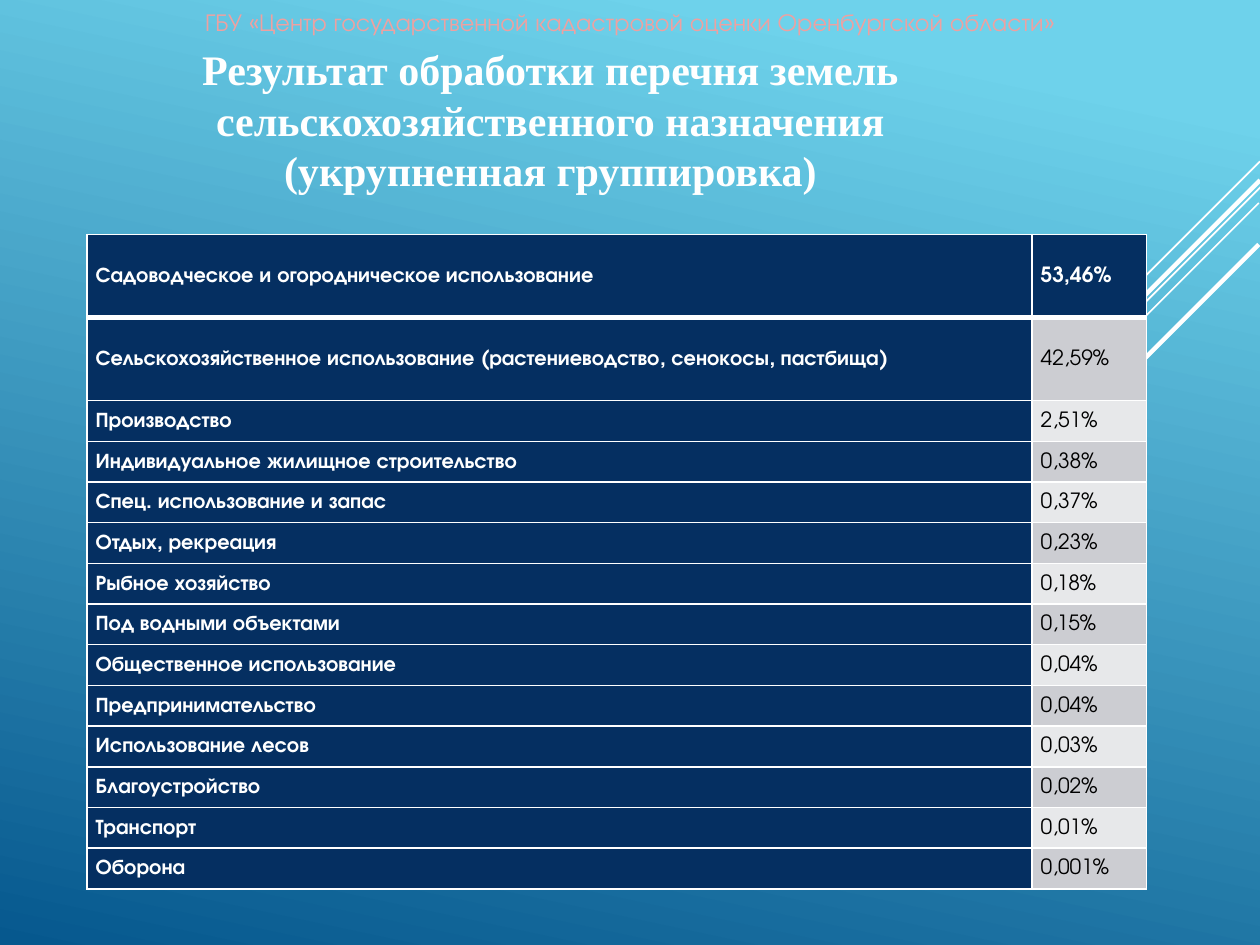
from lxml import etree
from pptx import Presentation
from pptx.dml.color import RGBColor
from pptx.enum import shapes, text
from pptx.oxml import ns
from pptx.util import Pt

COLORS = {
    "sky": "6ED2EB",
    "deep": "06588E",
    "white": "FFFFFF",
    "black": "000000",
    "navy": "052F61",
    "band_dark": "CCCDD2",
    "band_light": "E7E8EA",
    "pink": "EEA1A1",
}
SANS, SERIF = "TeX Gyre Adventor", "Times New Roman"

ORGANISATION = "ГБУ «Центр государственной кадастровой оценки Оренбургской области»"
TITLE = ("Результат обработки перечня земель сельскохозяйственного назначения "
         "(укрупненная группировка)")
LAND_USES = [
    ("Садоводческое и огородническое использование", "53,46%"),
    ("Сельскохозяйственное использование (растениеводство, сенокосы, пастбища)", "42,59%"),
    ("Производство", "2,51%"),
    ("Индивидуальное жилищное строительство", "0,38%"),
    ("Спец. использование и запас", "0,37%"),
    ("Отдых, рекреация", "0,23%"),
    ("Рыбное хозяйство", "0,18%"),
    ("Под водными объектами", "0,15%"),
    ("Общественное использование", "0,04%"),
    ("Предпринимательство", "0,04%"),
    ("Использование лесов", "0,03%"),
    ("Благоустройство", "0,02%"),
    ("Транспорт", "0,01%"),
    ("Оборона", "0,001%"),
]
# right end x, right end y, horizontal run, width
RAYS = [
    (720, 92.2, 247, 1),
    (720.7, 106.5, 379, 1),
    (719.3, 116, 308, 1),
    (720, 103, 302, 2.5),
    (719.3, 139.7, 270, 2.5),
]


def rgb(name):
    return RGBColor.from_string(COLORS[name])


def paint_background(slide):
    fill = slide.background.fill
    fill.gradient()
    fill.gradient_angle = 258
    for stop, color, position in zip(fill.gradient_stops, ("sky", "deep"), (0.1, 1)):
        stop.color.rgb = rgb(color)
        stop.position = position


def add_ray(slide, x, y, run, width):
    """Draw a line falling to the left at 45 degrees."""
    ray = slide.shapes.add_connector(
        shapes.MSO_CONNECTOR.STRAIGHT, Pt(x), Pt(y), Pt(x - run), Pt(y + run))
    ray.line.color.rgb = rgb("white")
    ray.line.width = Pt(width)
    etree.SubElement(ray._element.spPr, ns.qn("a:effectLst"))


def style_paragraph(paragraph, font, size, color, bold, alignment):
    paragraph.alignment = alignment
    paragraph.font.name = font
    paragraph.font.size = Pt(size)
    paragraph.font.bold = bold
    paragraph.font.color.rgb = rgb(color)


def add_caption(slide, wording, box, font, size, color, bold=False):
    frame = slide.shapes.add_textbox(*map(Pt, box)).text_frame
    frame.word_wrap = True
    frame.vertical_anchor = text.MSO_ANCHOR.MIDDLE
    frame.text = wording
    style_paragraph(frame.paragraphs[0], font, size, color, bold, text.PP_ALIGN.CENTER)


def set_borders(cell, **widths):
    """Give the cell white borders, with widths in points by side."""
    properties = cell._tc.get_or_add_tcPr()
    for index, (side, width) in enumerate(widths.items()):
        border = etree.Element(ns.qn(f"a:ln{side}"), w=str(Pt(width)))
        solid = etree.SubElement(border, ns.qn("a:solidFill"))
        etree.SubElement(solid, ns.qn("a:srgbClr"), val=COLORS["white"])
        properties.insert(index, border)


def fill_cell(cell, wording, fill, color, bold):
    cell.text = wording
    cell.vertical_anchor = text.MSO_ANCHOR.MIDDLE
    cell.margin_left = cell.margin_right = Pt(5)
    cell.margin_top = cell.margin_bottom = 0
    cell.fill.solid()
    cell.fill.fore_color.rgb = rgb(fill)
    paragraph = cell.text_frame.paragraphs[0]
    paragraph.line_spacing = 1.07
    style_paragraph(paragraph, SANS, 12, color, bold, text.PP_ALIGN.JUSTIFY)


def add_share_table(slide):
    table = slide.shapes.add_table(
        len(LAND_USES), 2, Pt(49.7), Pt(134), Pt(605.5), Pt(374)).table
    for column, width in zip(table.columns, (540, 65.5)):
        column.width = Pt(width)
    for index, land_use in enumerate(LAND_USES):
        table.rows[index].height = Pt(47.5 if index < 2 else 23.25)
        band = "band_dark" if index % 2 else "band_light"
        for column, wording in enumerate(land_use):
            cell = table.cell(index, column)
            if index == 0 or column == 0:
                fill_cell(cell, wording, "navy", "white", True)
            else:
                fill_cell(cell, wording, band, "black", False)
            set_borders(cell, L=1, R=1, T=3 if index == 1 else 1, B=3 if index == 0 else 1)


def main():
    deck = Presentation()
    deck.slide_width, deck.slide_height = Pt(720), Pt(540)
    slide = deck.slides.add_slide(deck.slide_layouts[6])
    paint_background(slide)
    for ray in RAYS:
        add_ray(slide, *ray)
    add_caption(slide, TITLE, (48, 21, 533, 94.5), SERIF, 24, "white", bold=True)
    add_share_table(slide)
    add_caption(slide, ORGANISATION, (0, 0, 720, 24.5), SANS, 14, "pink")
    deck.save("out.pptx")


if __name__ == "__main__":
    main()
